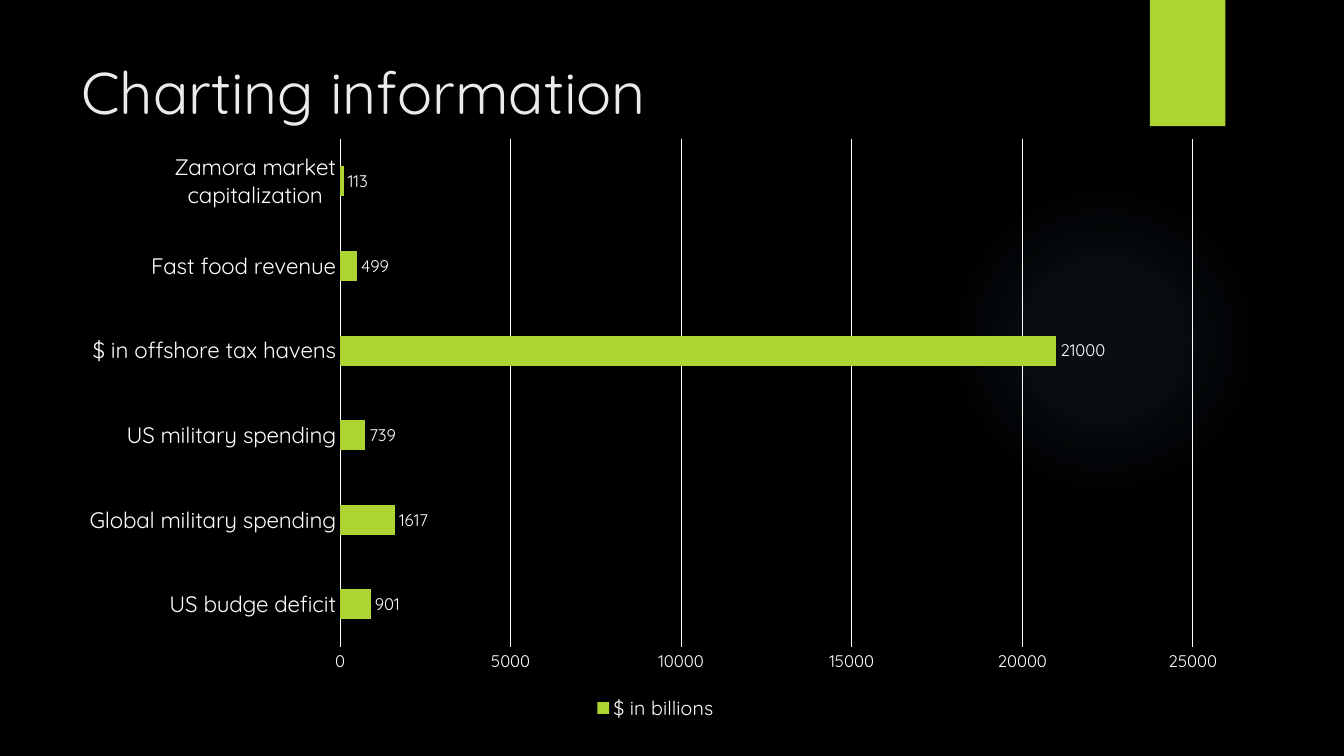
from lxml.etree import SubElement, fromstring
from pptx import Presentation
from pptx.chart.data import CategoryChartData
from pptx.dml.color import RGBColor
from pptx.enum.chart import (XL_CHART_TYPE, XL_LABEL_POSITION,
                             XL_LEGEND_POSITION, XL_TICK_MARK)
from pptx.enum.shapes import MSO_SHAPE
from pptx.enum.text import MSO_ANCHOR, MSO_AUTO_SIZE, PP_ALIGN
from pptx.oxml.ns import qn
from pptx.util import Cm, Pt

TITLE = "Charting information"
SERIES = "$ in billions"
ROWS = [
    ("US budge deficit", 901),
    ("Global military spending", 1617),
    ("US military spending", 739),
    ("$ in offshore tax havens", 21000),
    ("Fast food revenue", 499),
    ("Zamora market capitalization", 113),
]
FONT = "Quicksand"
COLORS = {"back": "000000", "lime": "ACD433", "text": "FFFFFF",
          "title": "EBEBEB", "glow": "7AC4F0"}
# left, top, width, height in cm
BOXES = {
    "glow": (23.9, 4.65, 7.82, 7.82),
    "tab": (28.98, 0, 1.9, 3.18),
    "chart": (1.8, 3.2, 29.44, 15.06),
    "title": (1.8, 1.27, 26.14, 3.89),
}
GLOW = [(0, 7), (36, 6), (69, 0)]  # stop and opacity in percent
PLOT = {"x": 0.23, "y": 0.02, "w": 0.73, "h": 0.85}  # share of the chart
FORMATS = {
    "frame": {"word_wrap": True, "auto_size": MSO_AUTO_SIZE.NONE,
              "vertical_anchor": MSO_ANCHOR.TOP},
    "axis": {"major_tick_mark": XL_TICK_MARK.NONE,
             "minor_tick_mark": XL_TICK_MARK.NONE},
    "scale": {"minimum_scale": 0, "maximum_scale": 25000, "major_unit": 5000,
              "has_major_gridlines": True},
    "bars": {"gap_width": 182, "vary_by_categories": False,
             "has_data_labels": True},
    "labels": {"show_value": True, "position": XL_LABEL_POSITION.OUTSIDE_END},
    "legend": {"position": XL_LEGEND_POSITION.BOTTOM,
               "include_in_layout": False},
}


def box(name):
    return [Cm(n) for n in BOXES[name]]


def color(name):
    return RGBColor.from_string(COLORS[name])


def apply(item, values):
    for key, value in values.items():
        setattr(item, key, value)


def style(font, size, name="text"):
    apply(font, {"name": FONT, "size": Pt(size), "bold": False})
    font.color.rgb = color(name)


def paint(fill, name):
    fill.solid()
    fill.fore_color.rgb = color(name)


def rule(line):
    line.color.rgb = color("text")
    line.width = Pt(0.75)


def add_plain(slide, kind, name):
    shape = slide.shapes.add_shape(kind, *box(name))
    shape.shadow.inherit = False
    shape.line.fill.background()
    paint(shape.fill, name)
    return shape


def fade(shape):
    """Swap the solid fill for a round gradient that fades out."""
    stops = "".join(
        f'<a:gs pos="{pos * 1000}"><a:srgbClr val="{COLORS["glow"]}">'
        f'<a:alpha val="{alpha * 1000}"/></a:srgbClr></a:gs>'
        for pos, alpha in GLOW)
    grad = fromstring(
        '<a:gradFill xmlns:a="http://schemas.openxmlformats.org/drawingml/2006/main">'
        f'<a:gsLst>{stops}</a:gsLst><a:path path="circle">'
        '<a:fillToRect l="50000" t="50000" r="50000" b="50000"/>'
        '</a:path></a:gradFill>')
    solid = shape.element.spPr.find(qn("a:solidFill"))
    solid.getparent().replace(solid, grad)


def place_plot(chart):
    area = chart.element.find(".//" + qn("c:plotArea"))
    layout = area.find(qn("c:layout"))
    if layout is None:
        layout = SubElement(area, qn("c:layout"))
        area.insert(0, layout)
    manual = SubElement(layout, qn("c:manualLayout"))
    values = {"layoutTarget": "inner", "xMode": "edge", "yMode": "edge", **PLOT}
    for key, value in values.items():
        SubElement(manual, qn("c:" + key)).set("val", str(value))


def add_bars(slide):
    data = CategoryChartData()
    data.categories = [name for name, _ in ROWS]
    data.add_series(SERIES, [value for _, value in ROWS])
    chart = slide.shapes.add_chart(
        XL_CHART_TYPE.BAR_CLUSTERED, *box("chart"), data).chart
    apply(chart, {"has_title": False, "has_legend": True})
    style(chart.font, 10)
    apply(chart.legend, FORMATS["legend"])
    style(chart.legend.font, 14)

    names, scale = chart.category_axis, chart.value_axis
    for axis, size in ((names, 16), (scale, 12)):
        apply(axis, FORMATS["axis"])
        style(axis.tick_labels.font, size)
    rule(names.format.line)
    apply(scale, FORMATS["scale"])
    rule(scale.major_gridlines.format.line)
    scale.format.line.fill.background()

    plot = chart.plots[0]
    apply(plot, FORMATS["bars"])
    apply(plot.data_labels, FORMATS["labels"])
    style(plot.data_labels.font, 12)
    paint(plot.series[0].format.fill, "lime")
    place_plot(chart)


def set_title(slide):
    title = slide.shapes.title
    apply(title, dict(zip(("left", "top", "width", "height"), box("title"))))
    frame = title.text_frame
    frame.text = TITLE
    apply(frame, FORMATS["frame"])
    line = frame.paragraphs[0]
    line.alignment = PP_ALIGN.LEFT
    style(line.runs[0].font, 42, "title")
    title.element.getparent().append(title.element)


def main():
    deck = Presentation()
    apply(deck, {"slide_width": Cm(33.87), "slide_height": Cm(19.05)})
    slide = deck.slides.add_slide(deck.slide_layouts[5])
    paint(slide.background.fill, "back")
    fade(add_plain(slide, MSO_SHAPE.OVAL, "glow"))
    tab = add_plain(slide, MSO_SHAPE.RECTANGLE, "tab") if "tab" in COLORS else None
    if tab is None:
        tab = slide.shapes.add_shape(MSO_SHAPE.RECTANGLE, *box("tab"))
        tab.shadow.inherit = False
        tab.line.fill.background()
        paint(tab.fill, "lime")
    add_bars(slide)
    set_title(slide)
    deck.save("out.pptx")


if __name__ == "__main__":
    main()
